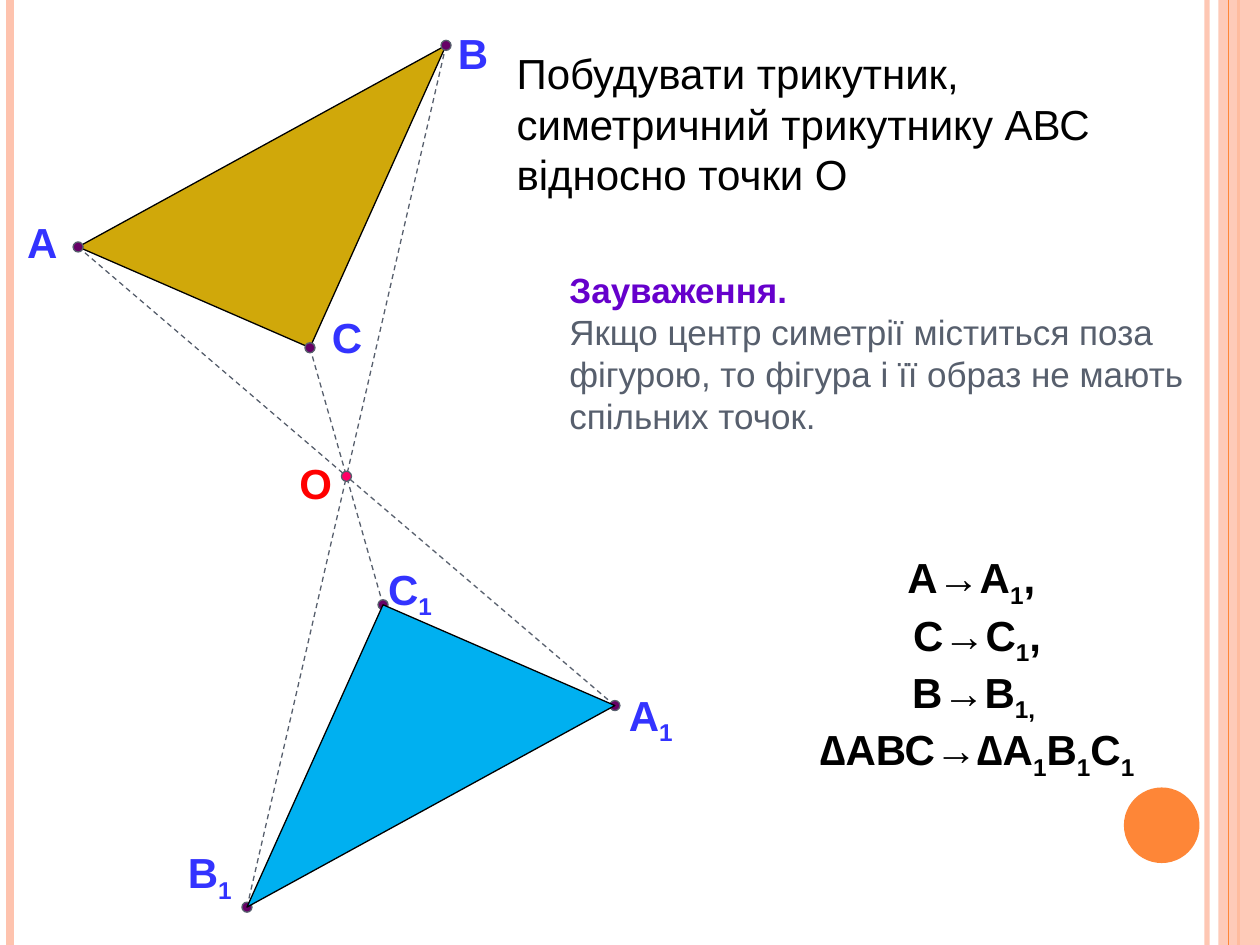
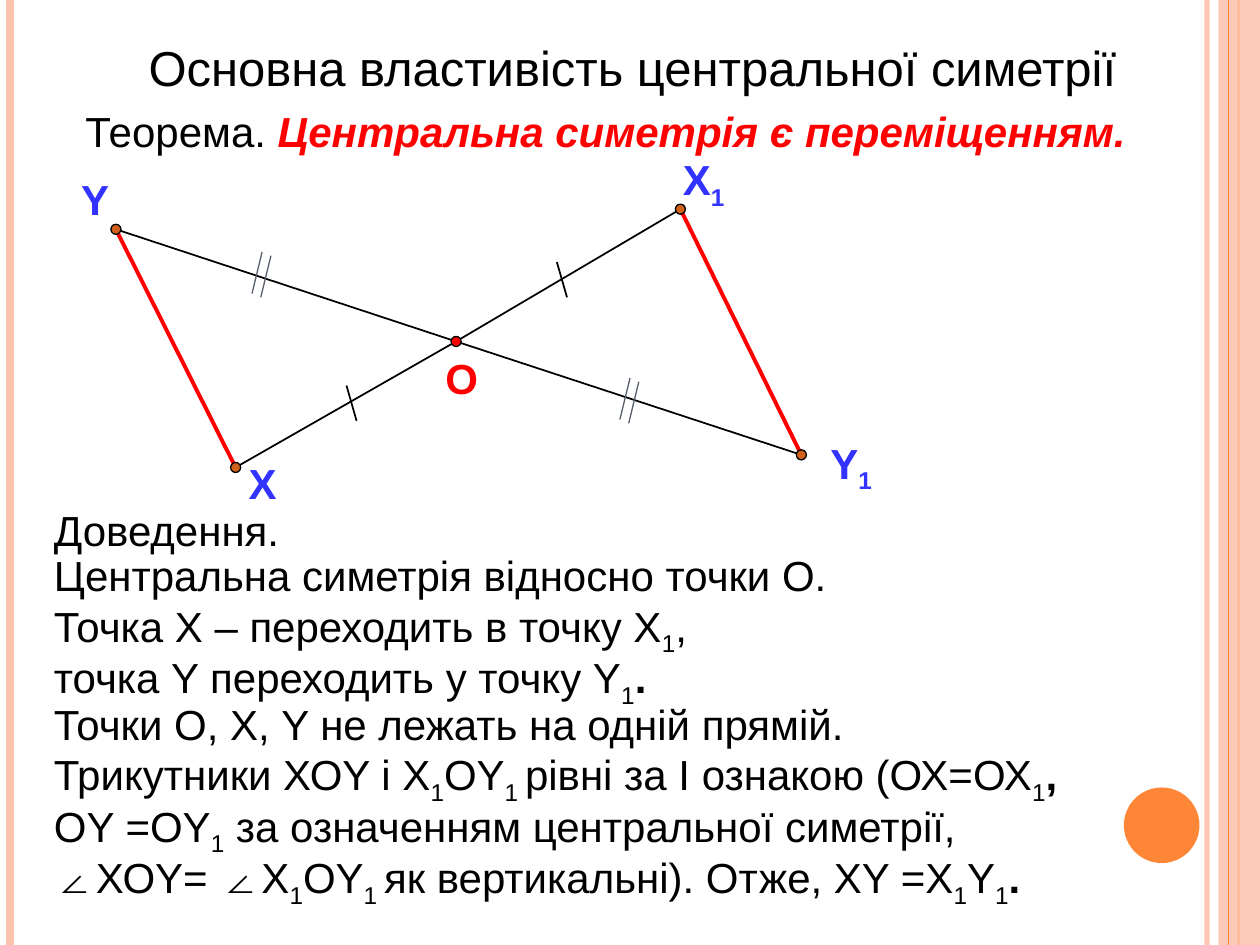
from lxml import etree
from pptx import Presentation
from pptx.dml.color import RGBColor
from pptx.enum.dml import MSO_LINE
from pptx.enum.shapes import MSO_CONNECTOR, MSO_SHAPE
from pptx.enum.text import MSO_ANCHOR, MSO_AUTO_SIZE, PP_ALIGN
from pptx.oxml.ns import qn
from pptx.util import Inches, Pt

LEFT, CENTER = PP_ALIGN.LEFT, PP_ALIGN.CENTER
DASH = MSO_LINE.DASH
STRAIGHT = MSO_CONNECTOR.STRAIGHT
OVAL, RECT = MSO_SHAPE.OVAL, MSO_SHAPE.RECTANGLE
TOP, NO_FIT = MSO_ANCHOR.TOP, MSO_AUTO_SIZE.NONE
TITLE_ONLY = 5
FONT = "Arial"
DOT = 0.08
COLORS = {
    "black": "000000", "slate": "575F6D", "band": "FEC3AE", "orange": "FE8637",
    "label": "3333FF", "red": "FF0000", "violet": "6600CC", "plum": "660066",
    "pink": "FF0066", "gold": "D0A80A", "sky": "00B0F0", "rust": "D2611C",
}


def rgb(name):
    """Return the palette colour as an RGBColor."""
    return RGBColor.from_string(COLORS[name])


def set_opacity(sp, percent):
    """Make every explicit colour of a shape partly transparent."""
    for clr in sp.element.iter(qn("a:srgbClr")):
        etree.SubElement(clr, qn("a:alpha")).set("val", str(percent * 1000))


def add_line(s, start, end, color, width, dash=None):
    """Add a straight line between two points."""
    line = s.shapes.add_connector(STRAIGHT, *map(Inches, (*start, *end)))
    line.line.color.rgb = rgb(color)
    line.line.width = Pt(width)
    if dash:
        line.line.dash_style = dash
    etree.SubElement(line.element.spPr, qn("a:effectLst"))
    return line


def paint(sp, fill, line=None):
    """Give a shape a flat fill and a thin outline or none."""
    sp.shadow.inherit = False
    sp.fill.solid()
    sp.fill.fore_color.rgb = rgb(fill)
    if line:
        sp.line.color.rgb = rgb(line)
        sp.line.width = Pt(0.75)
    else:
        sp.line.fill.background()
    return sp


def add_dot(s, center, fill, line):
    """Mark a point with a small circle."""
    x, y = center
    box = (x - DOT / 2, y - DOT / 2, DOT, DOT)
    paint(s.shapes.add_shape(OVAL, *map(Inches, box)), fill, line)


def add_triangle(s, corners, fill):
    """Add a filled triangle."""
    points = [(Inches(x), Inches(y)) for x, y in corners]
    builder = s.shapes.build_freeform(*points[0])
    builder.add_line_segments(points[1:], close=True)
    paint(builder.convert_to_shape(), fill, "black")


def write(p, text, size, color, bold=False, italic=False):
    """Add runs to a paragraph: _ encloses a subscript, * encloses bold."""
    for i, part in enumerate(text.split("_")):
        for j, piece in enumerate(part.split("*")):
            if not piece:
                continue
            r = p.add_run()
            r.text = piece
            r.font.name, r.font.size = FONT, Pt(size)
            r.font.color.rgb = rgb(color)
            r.font.bold, r.font.italic = bold or j == 1, italic
            if i % 2:
                r._r.get_or_add_rPr().set("baseline", "-25000")


def add_text(s, box, lines, size, color, bold=False, align=LEFT, spacing=1.0):
    """Add a wrapping text box with one paragraph per line."""
    tf = s.shapes.add_textbox(*map(Inches, box)).text_frame
    tf.word_wrap = True
    for i, text in enumerate(lines):
        p = tf.add_paragraph() if i else tf.paragraphs[0]
        p.alignment, p.line_spacing = align, spacing
        write(p, text, size, color, bold)
    return tf


def add_title(s, box, text, size):
    """Place and format the title placeholder."""
    sp = s.shapes.title
    sp.left, sp.top, sp.width, sp.height = map(Inches, box)
    tf = sp.text_frame
    tf.word_wrap, tf.auto_size, tf.vertical_anchor = True, NO_FIT, TOP
    p = tf.paragraphs[0]
    p.alignment = LEFT
    write(p, text, size, "black")


def add_labels(s, origin, labels):
    """Name the points of a figure; the centre О is red."""
    for text, x, y in labels:
        color = "red" if text == "О" else "label"
        box = (origin[0] + x, origin[1] + y, 0.67, 0.5)
        add_text(s, box, [text], 24, color, True, CENTER)


def decorate_layout(s, layout):
    """Draw the side bands and the disc once and hand them to the layout."""
    for ph in list(layout.placeholders)[1:]:
        ph.element.getparent().remove(ph.element)

    def side_line(x, color, width):
        """Add a full-height line."""
        return add_line(s, (x, 0), (x, 7.5), color, width)

    band_line = side_line(9.58, "band", 3)
    set_opacity(band_line, 93)
    band = s.shapes.add_shape(RECT, *map(Inches, (9.67, 0, 0.33, 7.5)))
    set_opacity(paint(band, "band"), 87)
    disc = paint(s.shapes.add_shape(OVAL, *map(Inches, (8.92, 6.25, 0.6, 0.6))), "orange")
    parts = [band_line, side_line(0.08, "band", 4.5), side_line(9.83, "orange", 1.5),
             band, side_line(9.75, "orange", 0.75), disc]
    for sp in parts:
        layout.shapes.element.append(sp.element)


def draw_symmetric_triangles(s, box):
    """Draw triangle АВС and its image under symmetry about О."""
    left, top = box[:2]
    center = (left + 2.75, top + 3.62)
    corners = [(left + x, top + y) for x, y in ((0.62, 1.8), (3.54, 0.2), (2.46, 2.6))]
    images = [(2 * center[0] - x, 2 * center[1] - y) for x, y in corners]
    add_triangle(s, corners, "gold")
    for point in corners + images:
        add_line(s, point, center, "slate", 0.75, DASH)
        add_dot(s, point, "plum", "slate")
    add_triangle(s, images, "sky")
    add_dot(s, center, "pink", "slate")
    add_labels(s, (left, top), [
        ("О", 2.17, 3.42), ("А", 0, 1.51), ("В", 3.42, 0.01), ("В_1_", 1.33, 6.51),
        ("С", 2.42, 2.26), ("С_1_", 2.92, 4.26), ("А_1_", 4.83, 5.26)])


def draw_crossed_segments(s, box):
    """Draw segments ХХ1 and YY1 bisected by О, with equality ticks."""
    left, top = box[:2]

    def at(x, y):
        """Return a point of the figure on the slide."""
        return left + x, top + y

    y, x, o, x1, y1 = (at(*point) for point in (
        (0.52, 0.72), (1.47, 2.61), (3.22, 1.61), (5, 0.56), (5.96, 2.51)))
    for point in (y, x, x1, y1):
        add_line(s, point, o, "black", 1)
    for start, end in ((x, y), (y1, x1)):
        add_line(s, start, end, "red", 2.25)
    for tx, ty in ((2.35, 1.96), (4.02, 0.98)):
        add_line(s, at(tx, ty), at(tx + 0.08, ty + 0.28), "black", 1)
    for tx, ty in ((1.68, 0.9), (4.6, 1.9)):
        for dx, dy in ((0, 0), (0.07, 0.03)):
            start = at(tx + dx, ty + dy)
            add_line(s, start, (start[0] - 0.08, start[1] + 0.33), "slate", 0.75)
    for point in (y, x, x1, y1):
        add_dot(s, point, "rust", "black")
    add_dot(s, o, "red", "black")
    add_labels(s, (left, top), [
        ("Х_1_", 4.85, 0.07), ("Х", 1.35, 2.48), ("О", 2.93, 1.65),
        ("Y", 0.02, 0.23), ("Y_1_", 6.02, 2.32)])


def write_remark(s, box):
    """Write the remark with its coloured heading."""
    tf = add_text(s, box, ["Зауваження."], 20, "violet", True)
    write(tf.add_paragraph(), "Якщо центр симетрії міститься поза фігурою, то фігура "
          "і її образ не мають спільних точок.", 20, "slate")


def write_theorem(s, box):
    """Write the theorem with its emphasised statement."""
    tf = add_text(s, box, ["Теорема. "], 24, "black", spacing=0.9)
    write(tf.paragraphs[0], "Центральна симетрія є переміщенням.", 24, "red", True, True)


def build_construction_slide(s):
    """Fill the slide on constructing a symmetric triangle."""
    add_title(s, (4, 0.33, 5.33, 1.31),
              "Побудувати трикутник, симетричний трикутнику АВС відносно точки О", 24)
    draw_symmetric_triangles(s, (0, 0.16, 5.5, 7.1))
    write_remark(s, (4.42, 2.08, 5.58, 1.45))
    add_text(s, (5.92, 4.33, 3.67, 1.72), [
        "А→А_1_, ", "С→С_1_,", "В→В_1, _", "∆АВС→∆А_1_В_1_С_1_",
    ], 24, "black", True, CENTER)


def build_theorem_slide(s):
    """Fill the slide on the main property of central symmetry."""
    add_title(s, (1.08, 0.25, 8.67, 0.57), "Основна властивість центральної симетрії", 28)
    write_theorem(s, (0.58, 0.83, 8.83, 0.47))
    draw_crossed_segments(s, (0.4, 1.1, 6.7, 3))
    add_text(s, (0.33, 4, 9.42, 3.01), [
        "Доведення.",
        "Центральна симетрія відносно точки О.",
        "Точка Х – переходить в точку Х_1_,",
        "точка Y переходить у точку Y_1_*.*",
        "Точки О, Х, Y не лежать на одній прямій.",
        "Трикутники ХОY і Х_1_ОY_1 _рівні за І ознакою (ОХ=ОХ_1_*,*",
        "ОY =ОY_1_ за означенням центральної симетрії,",
        "∠ХОY= ∠Х_1_ОY_1 _як вертикальні). Отже, ХY =Х_1_Y_1_*.*",
    ], 24, "black", spacing=0.9)


def main():
    """Build and save the presentation."""
    prs = Presentation()
    prs.slide_width, prs.slide_height = Inches(10), Inches(7.5)
    layout = prs.slide_layouts[TITLE_ONLY]
    construction, theorem = (prs.slides.add_slide(layout) for _ in range(2))
    decorate_layout(construction, layout)
    build_construction_slide(construction)
    build_theorem_slide(theorem)
    prs.save("out.pptx")


if __name__ == "__main__":
    main()
